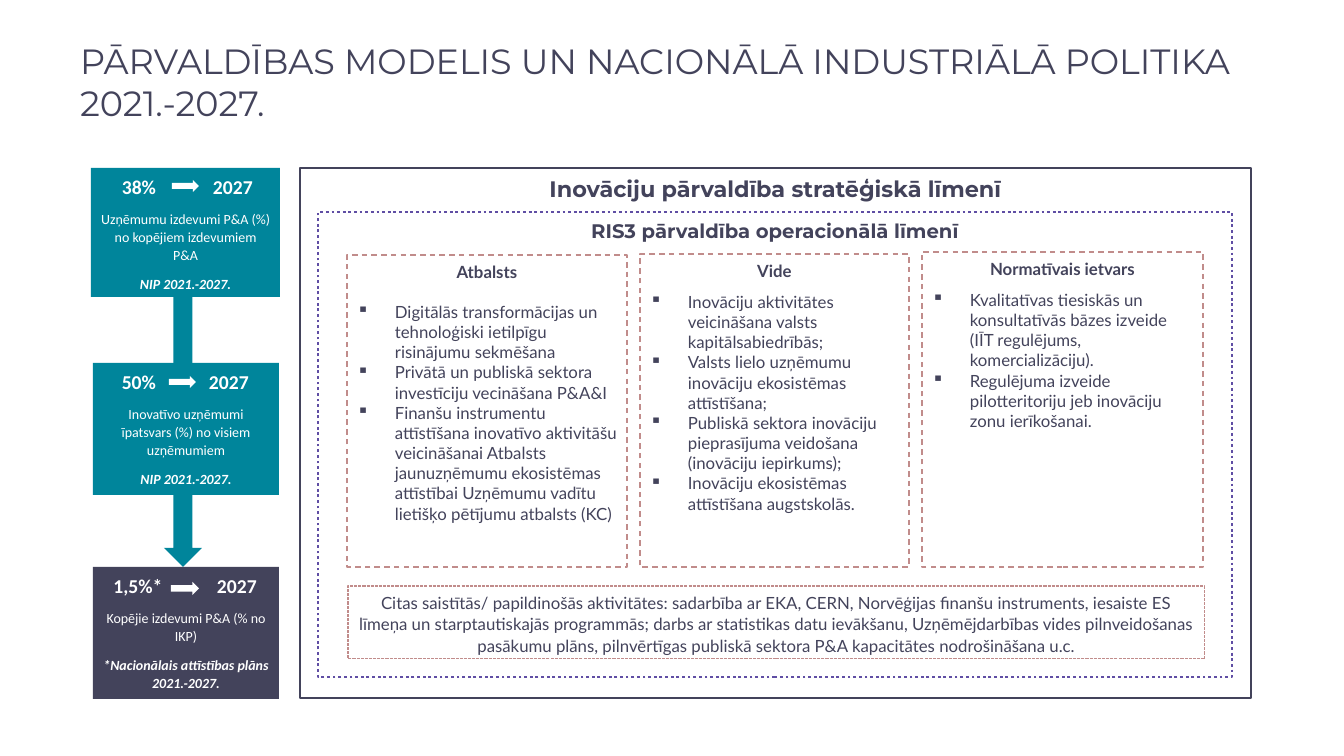
from lxml.etree import SubElement
from pptx import Presentation
from pptx.dml.color import RGBColor
from pptx.enum.dml import MSO_LINE as Dash
from pptx.enum.shapes import MSO_SHAPE as Kind
from pptx.enum.text import MSO_ANCHOR as Anchor, MSO_AUTO_SIZE as Fit, PP_ALIGN as Align
from pptx.oxml.ns import qn
from pptx.util import Pt

SCALE = 914400 / 100.8  # EMU per px
INDENT = 38
TEAL = RGBColor(0x00, 0x85, 0x9B)
SLATE = RGBColor(0x43, 0x43, 0x5B)
VIOLET = RGBColor(0x60, 0x4E, 0xA4)
ROSE = RGBColor(0xC1, 0x8C, 0x8B)
WHITE = RGBColor(0xFF, 0xFF, 0xFF)

TITLE = "PĀRVALDĪBAS MODELIS UN NACIONĀLĀ INDUSTRIĀLĀ POLITIKA 2021.-2027."

# box, fill, target, year, tab stops, label, source, small arrow
CARDS = [
    ((91, 168, 189, 129), TEAL, "38%", "2027", (38, 132),
     "Uzņēmumu izdevumi P&A (%) no kopējiem izdevumiem P&A",
     "NIP 2021.-2027.", (172, 180, 27, 12)),
    ((93, 363, 186, 132), TEAL, "50%", "2027", (36, 126),
     "Inovatīvo uzņēmumi īpatsvars (%) no visiem uzņēmumiem",
     "NIP 2021.-2027.", (169, 376, 27, 12)),
    ((93, 567, 186, 132), SLATE, "1,5%*", "2027", (35, 134),
     "Kopējie izdevumi P&A (% no IKP)",
     "*Nacionālais attīstības plāns 2021.-2027.", (171, 582, 28, 13)),
]

# box, line colour, dash, heading, size
FRAMES = [
    ((300, 168, 951, 530), SLATE, Dash.SOLID,
     "Inovāciju pārvaldība stratēģiskā līmenī", 16),
    ((318, 212, 914, 465), VIOLET, Dash.ROUND_DOT,
     "RIS3 pārvaldība operacionālā līmenī", 14),
]

# box, heading, space after heading, bullets
PILLARS = [
    ((347, 255, 280, 312), "Atbalsts", 14.4, [
        "Digitālās transformācijas un tehnoloģiski ietilpīgu risinājumu sekmēšana",
        "Privātā un publiskā sektora investīciju vecināšana P&A&I",
        "Finanšu instrumentu attīstīšana inovatīvo aktivitāšu veicināšanai "
        "Atbalsts jaunuzņēmumu ekosistēmas attīstībai Uzņēmumu vadītu "
        "lietišķo pētījumu atbalsts (KC)"]),
    ((640, 254, 269, 313), "Vide", 8, [
        "Inovāciju aktivitātes veicināšana valsts kapitālsabiedrībās;",
        "Valsts lielo uzņēmumu inovāciju ekosistēmas attīstīšana;",
        "Publiskā sektora inovāciju pieprasījuma veidošana (inovāciju iepirkums);",
        "Inovāciju ekosistēmas attīstīšana augstskolās."]),
    ((922, 252, 281, 315), "Normatīvais ietvars", 8, [
        "Kvalitatīvas tiesiskās un konsultatīvās bāzes izveide "
        "(IĪT regulējums, komercializāciju).",
        "Regulējuma izveide pilotteritoriju jeb inovāciju zonu ierīkošanai."]),
]

RELATED = (
    "Citas saistītās/ papildinošās aktivitātes: sadarbība ar EKA, CERN, "
    "Norvēģijas finanšu instruments, iesaiste ES līmeņa un starptautiskajās "
    "programmās; darbs ar statistikas datu ievākšanu, Uzņēmējdarbības vides "
    "pilnveidošanas pasākumu plāns, pilnvērtīgas publiskā sektora P&A "
    "kapacitātes nodrošināšana u.c.")


def px(n):
    return round(n * SCALE)


def add_box(slide, kind, box, fill=None, line=None, width=1, dash=Dash.SOLID):
    shape = slide.shapes.add_shape(kind, *map(px, box))
    shape.shadow.inherit = False
    if fill is None:
        shape.fill.background()
    else:
        shape.fill.solid()
        shape.fill.fore_color.rgb = fill
    if line is None:
        shape.line.fill.background()
    else:
        shape.line.color.rgb = line
        shape.line.width = Pt(width)
        shape.line.dash_style = dash
    frame = shape.text_frame
    frame.word_wrap = True
    frame.vertical_anchor = Anchor.TOP
    return frame


def write(frame, text, size, color, name, bold=False, italic=False,
          after=8, spacing=1.07, bullet=False, tabs=()):
    """Fill the first paragraph, or add one when it is already taken."""
    para = frame.paragraphs[0] if not frame.text else frame.add_paragraph()
    props = para._p.get_or_add_pPr()
    para.alignment = Align.LEFT if bullet or tabs else Align.CENTER
    if bullet:
        props.set("marL", str(px(INDENT)))
        props.set("indent", str(-px(INDENT)))
        SubElement(props, qn("a:buChar"), char="▪")
    if tabs:
        stops = SubElement(props, qn("a:tabLst"))
        for pos in tabs:
            SubElement(stops, qn("a:tab"), pos=str(px(pos)), algn="ctr")
    para.line_spacing = spacing
    para.space_after = Pt(after)
    para.text = text
    font = para.font
    font.name, font.size, font.bold, font.italic = name, Pt(size), bold, italic
    font.color.rgb = color


def add_title(slide):
    title = slide.shapes.title
    title.left, title.top, title.width, title.height = map(px, (70, 34, 1247, 95))
    frame = title.text_frame
    frame.word_wrap = True
    frame.auto_size = Fit.NONE
    frame.vertical_anchor = Anchor.TOP
    write(frame, TITLE, 25, SLATE, "Montserrat", after=0, spacing=1.0)
    frame.paragraphs[0].alignment = Align.LEFT


def add_cards(slide):
    add_box(slide, Kind.DOWN_ARROW, (164, 275, 38, 292), TEAL)
    for box, fill, target, year, tabs, label, origin, arrow in CARDS:
        card = add_box(slide, Kind.RECTANGLE, box, fill)
        write(card, f"\t{target}\t{year}", 14, WHITE, "Calibri", bold=True, tabs=tabs)
        write(card, label, 10, WHITE, "Calibri")
        write(card, origin, 10, WHITE, "Calibri", bold=True, italic=True)
        add_box(slide, Kind.RIGHT_ARROW, arrow, WHITE)


def add_model(slide):
    for box, line, dash, head, size in FRAMES:
        frame = add_box(slide, Kind.RECTANGLE, box, None, line, 2, dash)
        write(frame, head, size, SLATE, "Montserrat", bold=True)
    for box, head, gap, items in PILLARS:
        frame = add_box(slide, Kind.RECTANGLE, box, WHITE, ROSE, 1, Dash.DASH)
        write(frame, head, 12, SLATE, "Lato", bold=True, after=gap)
        for item in items:
            write(frame, item, 12, SLATE, "Lato", after=0, spacing=1.0, bullet=True)
    frame = add_box(slide, Kind.RECTANGLE, (348, 586, 857, 73),
                    WHITE, ROSE, 0.75, Dash.SQUARE_DOT)
    write(frame, RELATED, 12, SLATE, "Lato")


def main():
    deck = Presentation()
    deck.slide_width, deck.slide_height = px(1344), px(756)
    slide = deck.slides.add_slide(deck.slide_layouts[5])
    add_title(slide)
    add_cards(slide)
    add_model(slide)
    deck.save("out.pptx")


if __name__ == "__main__":
    main()
